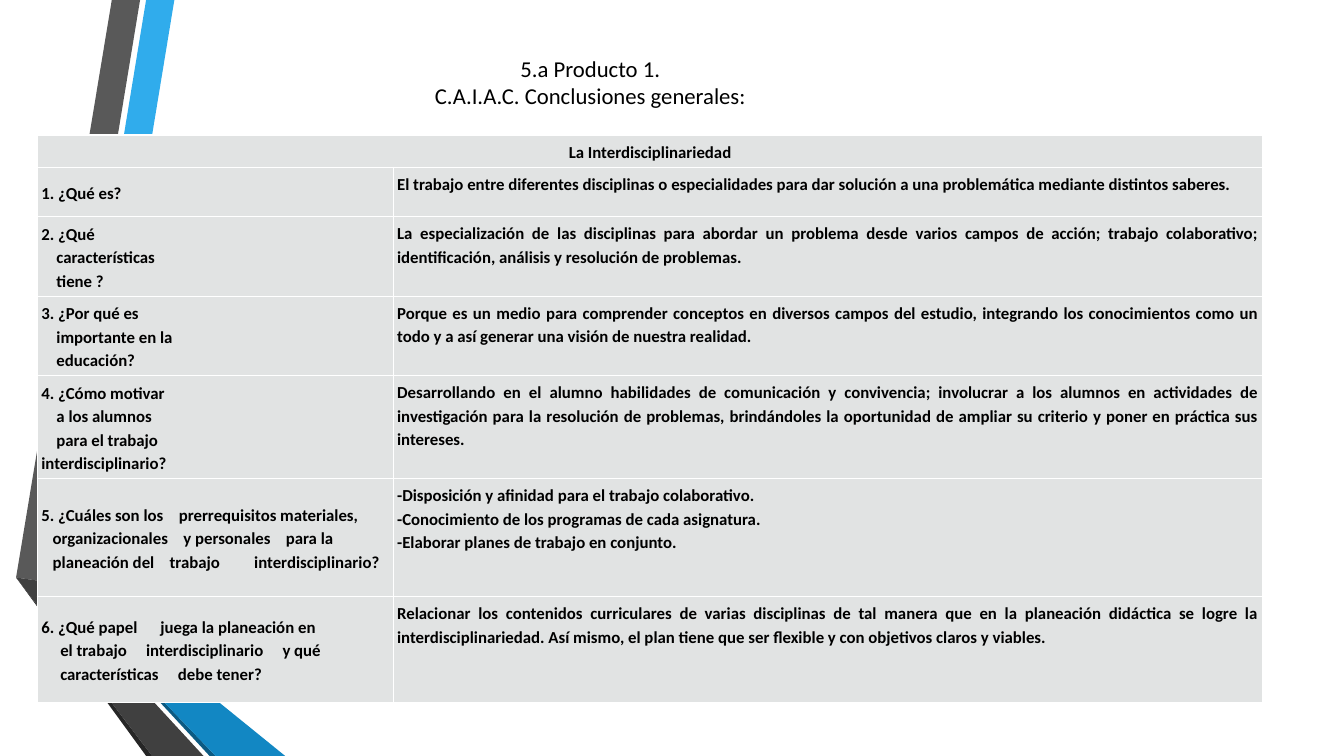
import dataclasses
import typing

import pptx
import pptx.dml.color
import pptx.enum.text
import pptx.oxml.ns
import pptx.util
from lxml import etree

STEP = 0.1
WIDE, HIGH = 133.33, 75
SPACE = 2.71
FONT = "Calibri"
HUES = {
    "sky": "30ACEC", "blue": "1287C3", "navy": "0C5A82",
    "gray": "595959", "dark": "404040", "coal": "262626",
    "cell": "E1E3E3", "rule": "FFFFFF", "ink": "000000",
}
ALIGN = pptx.enum.text.PP_ALIGN
ANCHOR = pptx.enum.text.MSO_ANCHOR


@dataclasses.dataclass
class Band:
    hue: str
    dots: list[tuple[float, float]]


@dataclasses.dataclass
class Line:
    text: str
    pad: int = 0
    gaps: tuple[int, ...] = ()


@dataclasses.dataclass
class Row:
    high: float
    ask: list[Line]
    reply: list[Line]
    align: typing.Any = ALIGN.JUSTIFY


BANDS = [
    Band("sky", [(5, 57.8), (7.7, 58.3), (17.3, 0), (14.5, 0)]),
    Band("gray", [(13.9, 0), (11.1, 0), (1.6, 57.3), (4.4, 57.7)]),
    Band("coal", [(1.6, 57.3), (14.5, HIGH), (15.1, HIGH)]),
    Band("navy", [(5, 57.9), (20.8, HIGH), (21.4, HIGH)]),
    Band("blue", [(5, 57.9), (21.4, HIGH), (28.3, HIGH), (7.7, 58.3), (5, 57.8)]),
    Band("dark", [(20.2, HIGH), (4.8, 58.3), (4.4, 57.7), (1.6, 57.3), (15.1, HIGH)]),
]
COLS = (35.3, 86.3)
HEAD = 3.2
ROWS = [
    Row(4.9, [Line("1. ¿Qué es?")],
        [Line("El trabajo entre diferentes disciplinas o especialidades para dar solución "
              "a una problemática mediante distintos saberes.")]),
    Row(7.9, [Line("2. ¿Qué"), Line("características", 4), Line("tiene ?", 4)],
        [Line("La especialización de las disciplinas para abordar un problema desde varios "
              "campos de acción; trabajo colaborativo; identificación, análisis y "
              "resolución de problemas.")]),
    Row(7.9, [Line("3. ¿Por qué es"), Line("importante en la", 4), Line("educación?", 4)],
        [Line("Porque es un medio para comprender conceptos en diversos campos del estudio, "
              "integrando los conocimientos como un todo y a así generar una visión de "
              "nuestra realidad.")]),
    Row(10.2, [Line("4. ¿Cómo motivar"), Line("a los alumnos", 4),
               Line("para el trabajo", 4), Line("interdisciplinario?")],
        [Line("Desarrollando en el alumno habilidades de comunicación y convivencia; "
              "involucrar a los alumnos en actividades de investigación para la resolución "
              "de problemas, brindándoles la oportunidad de ampliar su criterio y poner en "
              "práctica sus intereses.")]),
    Row(11.7, [Line("5. ¿Cuáles son los|prerrequisitos materiales,", 0, (4,)),
               Line("organizacionales|y personales|para la", 3, (4, 4)),
               Line("planeación del|trabajo|interdisciplinario?", 3, (4, 9))],
        [Line("-Disposición y afinidad para el trabajo colaborativo."),
         Line("-Conocimiento de los programas de cada asignatura."),
         Line("-Elaborar planes de trabajo en conjunto.")], ALIGN.LEFT),
    Row(10.5, [Line("6. ¿Qué papel|juega la planeación en", 0, (6,)),
               Line("el trabajo|interdisciplinario|y qué", 5, (5, 5)),
               Line("características|debe tener?", 5, (5,))],
        [Line("Relacionar los contenidos curriculares de varias disciplinas de tal manera "
              "que en la planeación didáctica se logre la interdisciplinariedad. Así mismo, "
              "el plan tiene que ser flexible y con objetivos claros y viables.")]),
]


def grid(count: float) -> int:
    return pptx.util.Inches(count * STEP)


def tint(hue: str) -> pptx.dml.color.RGBColor:
    return pptx.dml.color.RGBColor.from_string(HUES[hue])


def write(frame: typing.Any, lines: list[Line], *, size: float = 12, bold: bool = True,
          align: typing.Any = ALIGN.LEFT, lead: float = 1.15) -> None:
    for num, line in enumerate(lines):
        para = frame.add_paragraph() if num else frame.paragraphs[0]
        para.alignment, para.line_spacing = align, lead
        if line.pad:
            props = para._p.get_or_add_pPr()
            props.set("marL", str(pptx.util.Pt(line.pad * SPACE)))
            props.set("indent", "0")
        for part, text in enumerate(line.text.split("|")):
            if part:
                gap = para.add_run()
                gap.text = " "
                extra = round((line.gaps[part - 1] - 1) * SPACE * 100)
                gap._r.get_or_add_rPr().set("spc", str(extra))
            for turn, piece in enumerate(text.split("\n")):
                if turn:
                    para.add_line_break()
                para.add_run().text = piece
        for run in para.runs:
            run.font.name, run.font.size = FONT, pptx.util.Pt(size)
            run.font.bold = bold
            run.font.color.rgb = tint("ink")


def draw(slide: typing.Any, band: Band) -> None:
    dots = [(grid(x), grid(y)) for x, y in band.dots]
    pen = slide.shapes.build_freeform(*dots[0], scale=1.0)
    pen.add_line_segments(dots[1:], close=True)
    shape = pen.convert_to_shape()
    shape.shadow.inherit = False
    shape.fill.solid()
    shape.fill.fore_color.rgb = tint(band.hue)
    shape.line.fill.background()


def dress(cell: typing.Any) -> None:
    cell.margin_left = cell.margin_right = grid(0.4)
    cell.margin_top = cell.margin_bottom = grid(0.4)
    props = cell._tc.get_or_add_tcPr()
    name = pptx.oxml.ns.qn
    for side in ("lnL", "lnR", "lnT", "lnB"):
        edge = etree.SubElement(props, name("a:" + side), w=str(pptx.util.Pt(1)))
        fill = etree.SubElement(edge, name("a:solidFill"))
        etree.SubElement(fill, name("a:srgbClr"), val=HUES["rule"])
    cell.fill.solid()
    cell.fill.fore_color.rgb = tint("cell")


def title(slide: typing.Any) -> None:
    box = slide.shapes.add_textbox(grid(7.1), grid(5), grid(102.9), grid(6.3))
    box.text_frame.word_wrap = True
    box.text_frame.vertical_anchor = ANCHOR.MIDDLE
    write(box.text_frame, [Line("5.a Producto 1.\nC.A.I.A.C. Conclusiones generales:")],
          size=16.2, bold=False, align=ALIGN.CENTER, lead=1.0)


def table(slide: typing.Any) -> None:
    highs = [HEAD] + [row.high for row in ROWS]
    tab = slide.shapes.add_table(len(highs), len(COLS), grid(3.7), grid(13.4),
                                 grid(sum(COLS)), grid(sum(highs))).table
    tab.first_row = tab.horz_banding = False
    for col, wide in zip(tab.columns, COLS):
        col.width = grid(wide)
    for row, high in zip(tab.rows, highs):
        row.height = grid(high)
    for cell in tab.iter_cells():
        dress(cell)
    tab.cell(0, 0).merge(tab.cell(0, 1))
    write(tab.cell(0, 0).text_frame, [Line("La Interdisciplinariedad")], align=ALIGN.CENTER)
    for num, row in enumerate(ROWS, 1):
        ask = tab.cell(num, 0)
        ask.vertical_anchor = ANCHOR.MIDDLE
        write(ask.text_frame, row.ask)
        write(tab.cell(num, 1).text_frame, row.reply, align=row.align)


def main() -> None:
    deck = pptx.Presentation()
    deck.slide_width, deck.slide_height = grid(WIDE), grid(HIGH)
    slide = deck.slides.add_slide(deck.slide_layouts[6])
    for band in BANDS:
        draw(slide, band)
    title(slide)
    table(slide)
    deck.save("out.pptx")


if __name__ == "__main__":
    main()
